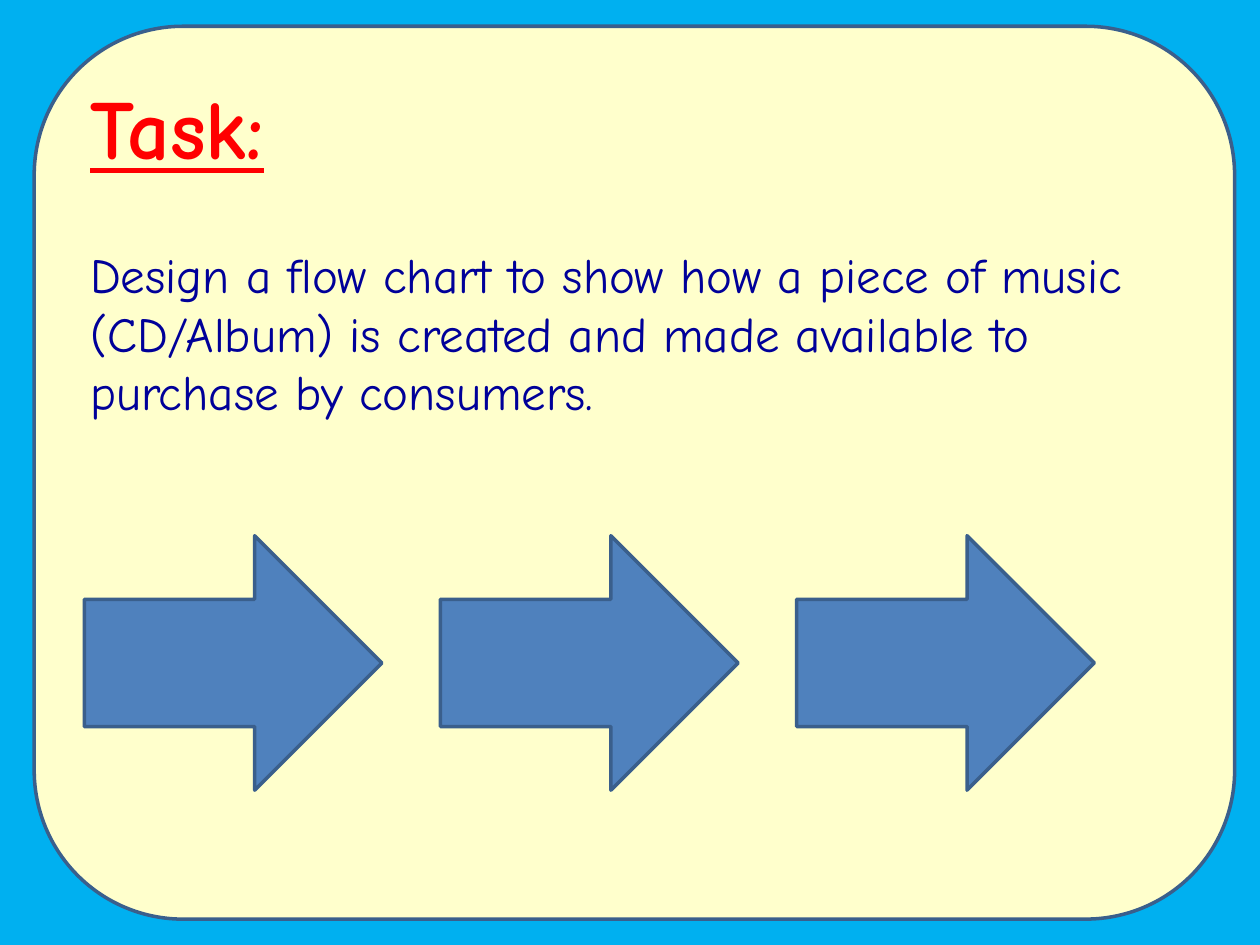
from pptx import Presentation
from pptx import util as u
from pptx.dml.color import RGBColor
from pptx.enum import shapes, text

SKY = RGBColor(0x00, 0xB0, 0xF0)
CREAM = RGBColor(0xFF, 0xFF, 0xCC)
BLUE = RGBColor(0x4F, 0x81, 0xBD)
OUTLINE = RGBColor(0x3A, 0x5F, 0x8C)
RED = RGBColor(0xFF, 0x00, 0x00)
NAVY = RGBColor(0x00, 0x00, 0x99)


class TaskSlide:
    """Holds the shared style and the slide being filled."""

    font_name = "Comic Neue"
    line_width = u.Pt(2)

    def __init__(self, presentation):
        self.slide = presentation.slides.add_slide(presentation.slide_layouts[6])

    def background(self, color):
        fill = self.slide.background.fill
        fill.solid()
        fill.fore_color.rgb = color

    def shape(self, kind, left, top, width, height, color):
        shape = self.slide.shapes.add_shape(
            kind, u.Cm(left), u.Cm(top), u.Cm(width), u.Cm(height))
        shape.shadow.inherit = False
        shape.fill.solid()
        shape.fill.fore_color.rgb = color
        shape.line.color.rgb = OUTLINE
        shape.line.width = self.line_width
        return shape

    def panel(self, left, top, width, height):
        panel = self.shape(shapes.MSO_SHAPE.ROUNDED_RECTANGLE,
                           left, top, width, height, CREAM)
        panel.text_frame.word_wrap = True
        panel.text_frame.vertical_anchor = text.MSO_ANCHOR.TOP
        return panel

    def arrow(self, left, top, width, height):
        return self.shape(shapes.MSO_SHAPE.RIGHT_ARROW,
                          left, top, width, height, BLUE)

    def add_text(self, paragraph, wording, size, color, heading=False):
        paragraph.alignment = text.PP_ALIGN.LEFT
        run = paragraph.add_run()
        run.text = wording
        run.font.name = self.font_name
        run.font.size = u.Pt(size)
        run.font.color.rgb = color
        run.font.bold = heading
        run.font.underline = heading


def main():
    presentation = Presentation()
    presentation.slide_width = u.Cm(25.4)
    presentation.slide_height = u.Cm(19.05)
    task = TaskSlide(presentation)
    task.background(SKY)

    # Panel with the heading and the instruction
    frame = task.panel(0.69, 0.53, 24.2, 18).text_frame
    task.add_text(frame.paragraphs[0], "Task:", 48, RED, heading=True)
    instruction = frame.add_paragraph()
    instruction.space_before = u.Pt(38.5)
    task.add_text(instruction,
                  "Design a flow chart to show how a piece of music (CD/Album) "
                  "is created and made available to purchase by consumers.",
                  28, NAVY)

    # Row of flow arrows
    first_left, pitch = 1.7, 7.18
    for step in range(3):
        task.arrow(first_left + step * pitch, 10.8, 6, 5.13)

    presentation.save("out.pptx")


if __name__ == "__main__":
    main()
